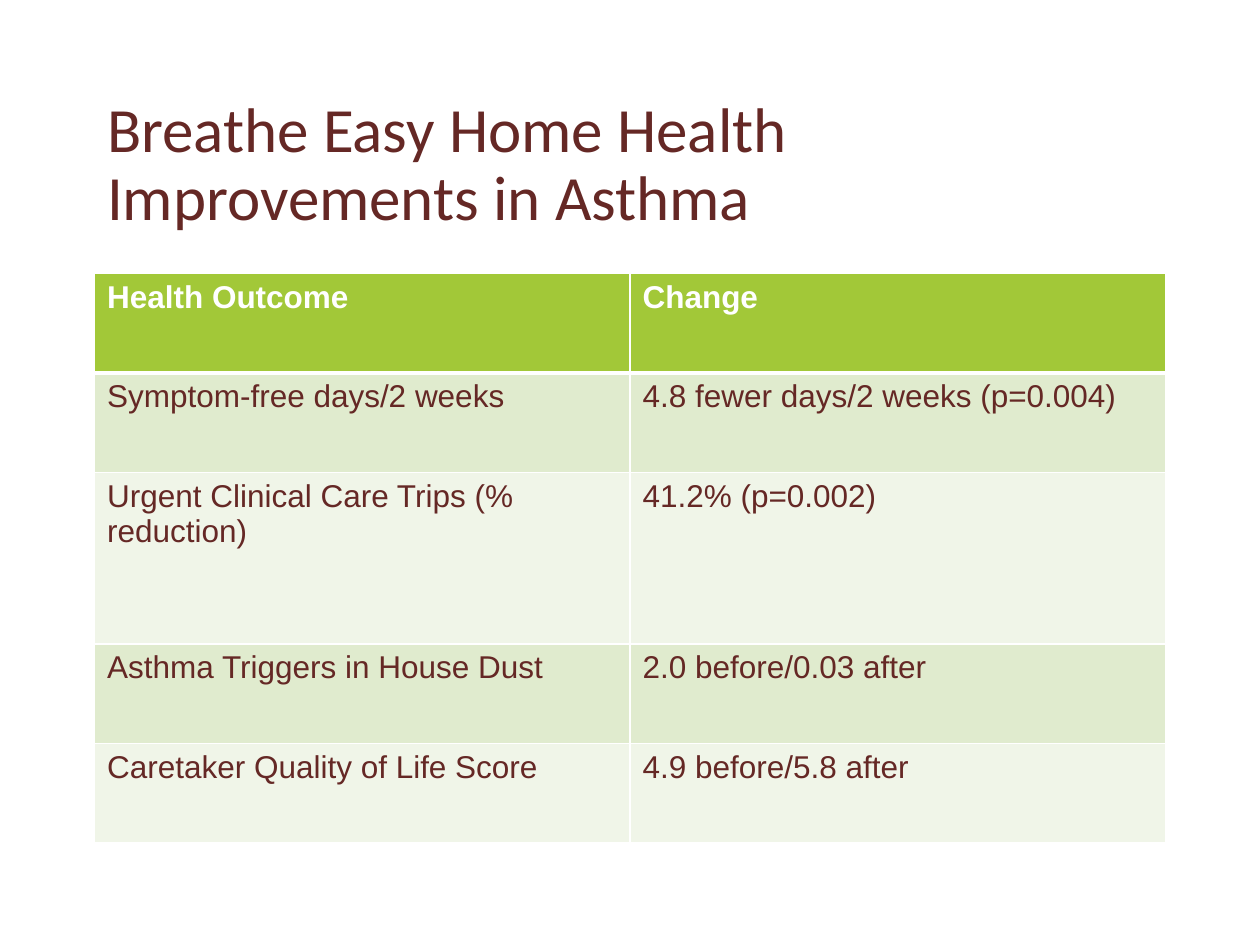
from lxml import etree
from pptx import Presentation
from pptx import util as u
from pptx.dml.color import RGBColor
from pptx.enum import text
from pptx.oxml import ns

BROWN = RGBColor(0x65, 0x28, 0x25)
GREEN = RGBColor(0xA2, 0xC8, 0x38)
BAND_DARK = RGBColor(0xE0, 0xEB, 0xCE)
BAND_LIGHT = RGBColor(0xF0, 0xF5, 0xE8)
WHITE = RGBColor(0xFF, 0xFF, 0xFF)

LEFT, WIDTH = 0.75, 8.5
ROW_HEIGHTS = [0.79, 0.79, 1.36, 0.79, 0.79]
OUTCOMES = [
    ("Health Outcome", "Change"),
    ("Symptom-free days/2 weeks", "4.8 fewer days/2 weeks (p=0.004)"),
    ("Urgent Clinical Care Trips (% reduction)", "41.2% (p=0.002)"),
    ("Asthma Triggers in House Dust", "2.0 before/0.03 after"),
    ("Caretaker Quality of Life Score", "4.9 before/5.8 after"),
]


def write(frame, words, size=18, font="Arial", color=BROWN, bold=False, spacing=None):
    """Put one formatted paragraph into a text frame."""
    frame.word_wrap = True
    paragraph = frame.paragraphs[0]
    paragraph.alignment = text.PP_ALIGN.LEFT
    paragraph.line_spacing = spacing
    run = paragraph.add_run()
    run.text = words
    run.font.size, run.font.name = u.Pt(size), font
    run.font.bold, run.font.color.rgb = bold, color


def add_borders(cell, top=1, bottom=1):
    """Draw white cell borders, with widths in points."""
    properties = cell._tc.get_or_add_tcPr()
    for side, width in (("L", 1), ("R", 1), ("T", top), ("B", bottom)):
        line = etree.SubElement(properties, ns.qn(f"a:ln{side}"), w=str(u.Pt(width)))
        fill = etree.SubElement(line, ns.qn("a:solidFill"))
        etree.SubElement(fill, ns.qn("a:srgbClr"), val=str(WHITE))


def add_title(slide, words):
    title = slide.shapes.title
    title.left, title.top = u.Inches(LEFT), u.Inches(0.66)
    title.width, title.height = u.Inches(WIDTH), u.Inches(1.25)
    title.text_frame.vertical_anchor = text.MSO_ANCHOR.BOTTOM
    write(title.text_frame, words, size=36, font="Calibri", spacing=0.9)


def add_outcome_table(slide):
    columns = len(OUTCOMES[0])
    table = slide.shapes.add_table(
        len(OUTCOMES), columns, u.Inches(LEFT), u.Inches(2.17),
        u.Inches(WIDTH), u.Inches(sum(ROW_HEIGHTS))).table
    for column in table.columns:
        column.width = u.Inches(WIDTH / columns)
    for r, (outcome, height) in enumerate(zip(OUTCOMES, ROW_HEIGHTS)):
        table.rows[r].height = u.Inches(height)
        header = r == 0
        band = GREEN if header else (BAND_LIGHT, BAND_DARK)[r % 2]
        for c, words in enumerate(outcome):
            cell = table.cell(r, c)
            # The rule between header and body is thicker
            add_borders(cell, top=3 if r == 1 else 1, bottom=3 if header else 1)
            cell.fill.solid()
            cell.fill.fore_color.rgb = band
            write(cell.text_frame, words, color=WHITE if header else BROWN, bold=header)


def main():
    deck = Presentation()
    deck.slide_width, deck.slide_height = u.Inches(10), u.Inches(7.5)
    slide = deck.slides.add_slide(deck.slide_layouts[5])
    add_title(slide, "Breathe Easy Home Health Improvements in Asthma")
    add_outcome_table(slide)
    deck.save("out.pptx")


if __name__ == "__main__":
    main()
